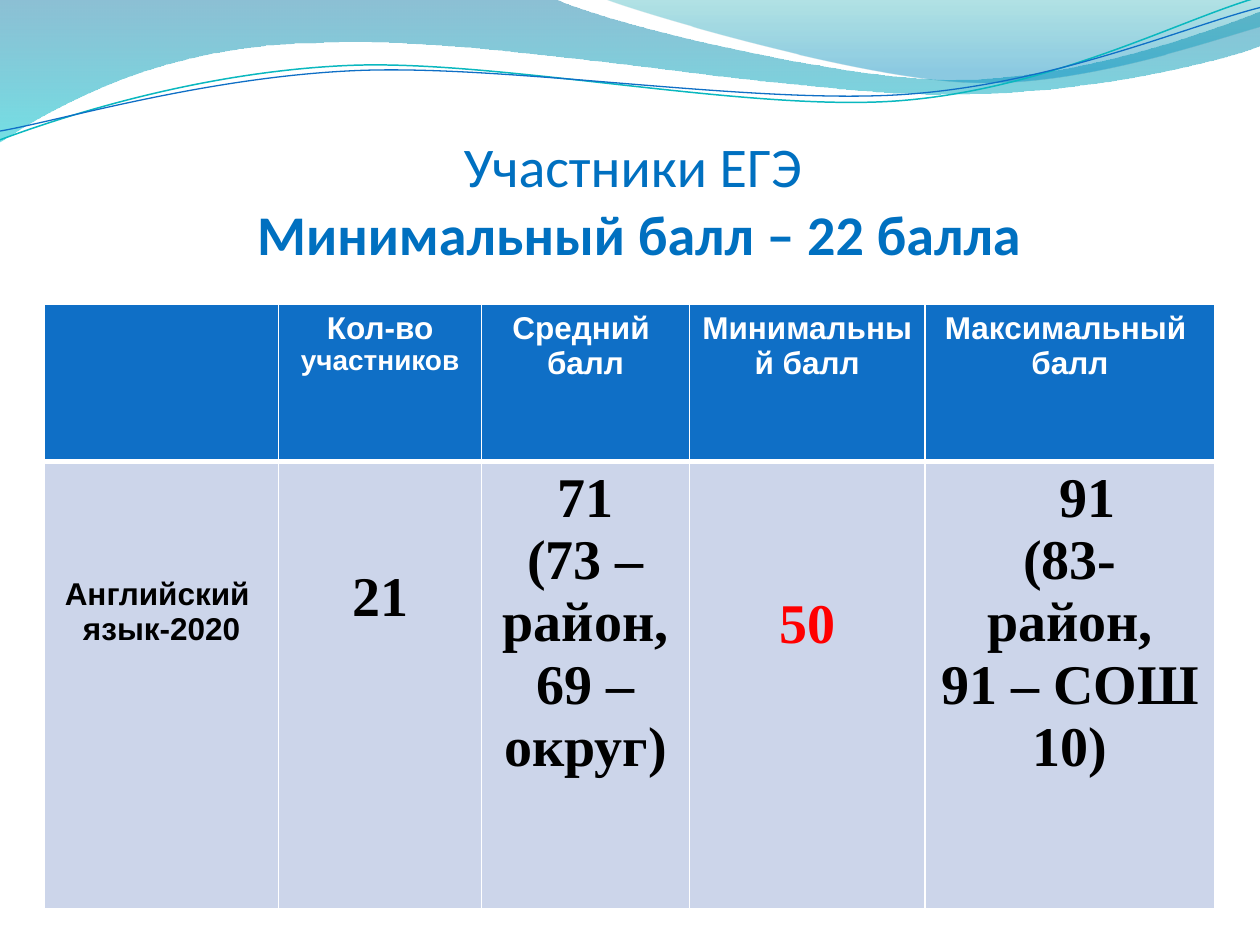
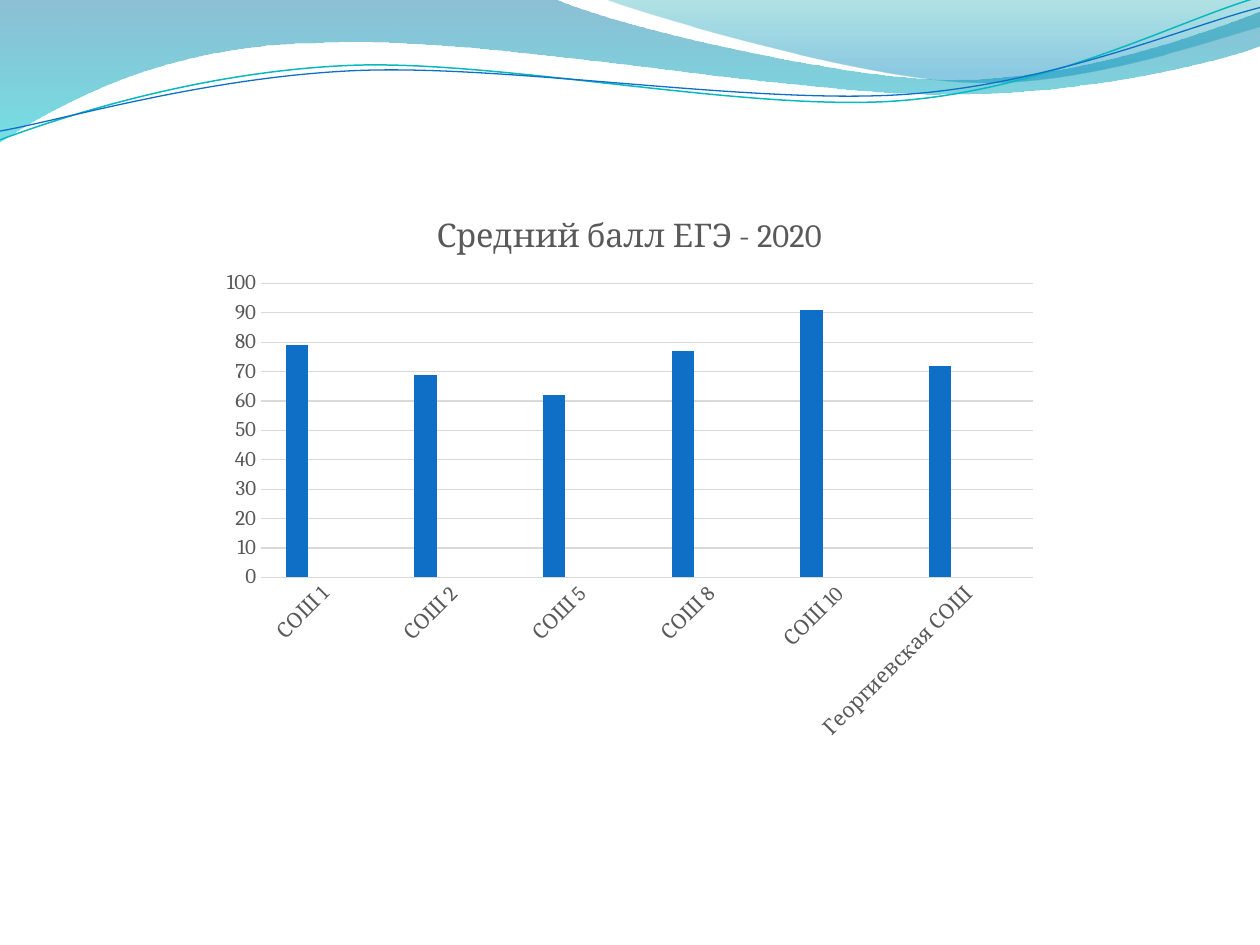
import math

from lxml import etree
from pptx import Presentation
from pptx.chart.data import CategoryChartData
from pptx.dml.color import RGBColor
from pptx.enum import chart as ch, text as tx
from pptx.oxml.ns import qn
from pptx.util import Pt

BLUE = RGBColor(0x0F, 0x6F, 0xC6)
SKY = RGBColor(0x00, 0x9D, 0xD9)
AQUA = RGBColor(0x0B, 0xD0, 0xD9)
TEAL = RGBColor(0x0A, 0xB8, 0xBF)
HEAD = RGBColor(0x00, 0x70, 0xC0)
PALE = RGBColor(0xCC, 0xD5, 0xEA)
WHITE = RGBColor(0xFF, 0xFF, 0xFF)
BLACK = RGBColor(0, 0, 0)
RED = RGBColor(0xFF, 0, 0)
GREY = RGBColor(0x59, 0x59, 0x59)
GRID = RGBColor(0xD9, 0xD9, 0xD9)

# Each wave starts at a point; one more point makes a line, three a curve.
# Gradient stops are position, colour and opacity in percent.
BANDS = [
    ([[(0, -0.7)], [(316.8, -0.7)],
      [(342.7, 12.2), (478.1, 45.4), (545.8, 45.4)],
      [(614.2, 45.4), (689.8, 18.7), (720, 6.5)], [(720.7, 25.9)],
      [(707.8, 31.7), (626.4, 54.7), (537.1, 54)],
      [(447.8, 54), (275, 20.2), (185, 24.5)],
      [(92.9, 25.2), (33.1, 59.8), (-0.7, 81.4)]],
     [(0, RGBColor(0x00, 0x74, 0xA1), 45),
      (1, RGBColor(0x00, 0xC6, 0xCF), 55)]),
    ([[(344.9, -0.7)],
      [(366.5, 7.9), (491, 44.6), (553.7, 46.8)],
      [(616.3, 49.7), (691.9, 23), (720, 15.1)], [(720, 0)]],
     [(0, RGBColor(0x00, 0xA1, 0xA9), 30),
      (0.8, RGBColor(0x00, 0x8B, 0xBF), 45)]),
]
CURVES = [
    ([[(0, 79.9)],
      [(34.6, 67), (113.8, 41), (199.4, 37.4)],
      [(284.4, 33.8), (427, 64.1), (513.4, 57.6)],
      [(599.8, 51.1), (675.4, 10.8), (718.6, -1.4)]], TEAL, 0.85),
    ([[(0, 74.9)],
      [(33.8, 69.1), (118.1, 43.9), (203.8, 40.3)],
      [(290.2, 36.7), (429.8, 59.8), (516.2, 54)],
      [(601.9, 48.2), (677.5, 15.1), (720, 4.3)]], BLUE, 0.75),
]
TILT = 2.7
HUB = (359.4, 42)

ARIAL = dict(name="Arial", size=Pt(18), bold=True)
TIMES = dict(name="Times New Roman", size=Pt(32), bold=True)
CAMBRIA = dict(name="Cambria", size=Pt(12), bold=False)


def put(obj, vals):
    for key, val in vals.items():
        setattr(obj, key, val)


def ink(font, color, vals):
    put(font, vals)
    font.color.rgb = color


def turn(point, angle):
    """Turn a point clockwise about the hub of the thin curves."""
    x, y = point[0] - HUB[0], point[1] - HUB[1]
    cos, sin = math.cos(math.radians(angle)), math.sin(math.radians(angle))
    return HUB[0] + x * cos - y * sin, HUB[1] + x * sin + y * cos


def outline(slide, parts, close, tilt=0):
    """Build a freeform, then join each three-point part into a curve."""
    pts = [tuple(map(Pt, turn(p, tilt))) for part in parts for p in part]
    pen = slide.shapes.build_freeform(*pts[0])
    pen.add_line_segments(pts[1:], close=close)
    shape = pen.convert_to_shape()
    shape.shadow.inherit = False
    shape.rotation = -tilt
    legs = iter(list(shape._element.iter(qn("a:lnTo"))))
    for part in parts[1:]:
        first, *rest = [next(legs) for _ in part]
        if rest:
            bend = etree.Element(qn("a:cubicBezTo"))
            first.addprevious(bend)
            for leg in (first, *rest):
                bend.append(leg[0])
                leg.getparent().remove(leg)
    return shape


def waves(slide, master):
    """Draw the waves and move them behind everything on the master."""
    made = []
    for parts, stops in BANDS:
        band = outline(slide, parts, True)
        band.fill.gradient()
        band.fill.gradient_angle = 270
        for stop, (pos, color, _) in zip(band.fill.gradient_stops, stops):
            stop.position = pos
            stop.color.rgb = color
        tones = list(band._element.spPr.iter(qn("a:srgbClr")))
        for tone, (_, _, alpha) in zip(tones, stops):
            etree.SubElement(tone, qn("a:alpha"), val=str(alpha * 1000))
        band.line.fill.background()
        made.append(band)
    for parts, color, width in CURVES:
        curve = outline(slide, parts, False, TILT)
        curve.fill.background()
        curve.line.color.rgb = color
        curve.line.width = Pt(width)
        made.append(curve)
    for i, shape in enumerate(made):
        node = shape._element
        node.nvSpPr.cNvPr.set("id", str(100 + i))
        master.shapes._spTree.insert(2 + i, node)


def heading(slide, box):
    title = slide.shapes.title
    put(title, dict(zip(("left", "top", "width", "height"), map(Pt, box))))
    frame = title.text_frame
    put(frame, dict(auto_size=tx.MSO_AUTO_SIZE.NONE, word_wrap=True,
                    vertical_anchor=tx.MSO_ANCHOR.BOTTOM,
                    margin_left=0, margin_right=0,
                    margin_top=Pt(3.6), margin_bottom=Pt(38.6)))
    para = frame.paragraphs[0]
    para.alignment = tx.PP_ALIGN.CENTER
    for i, words in enumerate(("Участники ЕГЭ ",
                               "Минимальный балл – 22 балла")):
        if i:
            para.add_line_break()
        run = para.add_run()
        run.text = words
        ink(run.font, HEAD, dict(name="Calibri", size=Pt(32), bold=i == 1))


def border(cell, widths):
    for side, width in zip("LRTB", widths):
        edge = etree.SubElement(cell._tc.get_or_add_tcPr(),
                                qn("a:ln" + side), w=str(Pt(width)))
        fill = etree.SubElement(edge, qn("a:solidFill"))
        etree.SubElement(fill, qn("a:srgbClr"), val=str(WHITE))


def write(cell, lines, color, font, top=3.6):
    cell.margin_top = Pt(top)
    frame = cell.text_frame
    for i, words in enumerate(lines):
        para = frame.add_paragraph() if i else frame.paragraphs[0]
        para.alignment = tx.PP_ALIGN.CENTER
        run = para.add_run()
        run.text = words
        ink(run.font, color, font)


def scores(slide, left, top):
    cols = (133.9, 115.9, 118.8, 134.6, 165.7)
    rows = (89.8, 256)
    grid = slide.shapes.add_table(2, 5, Pt(left), Pt(top),
                                  Pt(sum(cols)), Pt(sum(rows))).table
    for col, width in zip(grid.columns, cols):
        col.width = Pt(width)
    for row, height in zip(grid.rows, rows):
        row.height = Pt(height)
    for r, (fill, foot) in enumerate(((BLUE, 3), (PALE, 1))):
        for cell in grid.rows[r].cells:
            border(cell, (1, 1, 3 if r else 1, foot))
            cell.fill.solid()
            cell.fill.fore_color.rgb = fill
    heads = (["Кол-во "], ["Средний ", "балл"], ["Минимальный балл"],
             ["Максимальный ", "балл"])
    for c, lines in enumerate(heads, 1):
        write(grid.cell(0, c), lines, WHITE, ARIAL)
    run = grid.cell(0, 1).text_frame.paragraphs[0].add_run()
    run.text = "участников"
    ink(run.font, WHITE, {**ARIAL, "size": Pt(16)})
    body = ((["Английский ", "язык-2020"], BLACK, ARIAL, 66),
            (["21"], BLACK, TIMES, 60),
            (["71", "(73 – район, 69 – округ)"], BLACK, TIMES),
            (["50"], RED, TIMES, 75.4),
            (["91", "(83- район,", "91 – СОШ 10)"], BLACK, TIMES))
    for c, args in enumerate(body):
        write(grid.cell(1, c), *args)
    best = grid.cell(1, 4).text_frame.paragraphs[0]
    best._p.get_or_add_pPr().set("marL", str(Pt(20)))


def layout(node, index, inner=False, **spots):
    """Fix the place of a chart part as shares of the chart."""
    for old in node.findall(qn("c:layout")):
        node.remove(old)
    outer = etree.Element(qn("c:layout"))
    node.insert(index, outer)
    hand = etree.SubElement(outer, qn("c:manualLayout"))
    if inner:
        etree.SubElement(hand, qn("c:layoutTarget"), val="inner")
    for key in ("x", "y"):
        etree.SubElement(hand, qn(f"c:{key}Mode"), val="edge")
    for key, val in spots.items():
        etree.SubElement(hand, qn("c:" + key), val=str(val))


def averages(slide, box):
    data = CategoryChartData()
    data.categories = ["СОШ 1", "СОШ 2", "СОШ 5", "СОШ 8", "СОШ 10",
                       "Георгиевская СОШ"]
    data.add_series("Series 1", (79, 69, 62, 77, 91, 72))
    for name in ("Series 2", "Series 3"):
        data.add_series(name, (None,) * 6)
    chart = slide.shapes.add_chart(ch.XL_CHART_TYPE.COLUMN_CLUSTERED,
                                   *map(Pt, box), data).chart
    chart.has_legend = False
    ink(chart.font, BLACK, {**CAMBRIA, "size": Pt(10)})
    frame = chart.chart_title.text_frame
    frame.text = "Средний балл ЕГЭ - 2020"
    ink(frame.paragraphs[0].runs[0].font, GREY, {**CAMBRIA, "size": Pt(18.6)})
    wide, high = box[2:]
    layout(chart.chart_title._element, 1, x=126.2 / wide, y=8.6 / high)
    layout(chart._chartSpace.chart.plotArea, 0, True,
           x=29.2 / wide, y=52 / high, w=441.2 / wide, h=168 / high)

    plot = chart.plots[0]
    put(plot, dict(gap_width=219, overlap=-27, vary_by_categories=False))
    for ser, color in zip(plot.series, (BLUE, SKY, AQUA)):
        ser.format.fill.solid()
        ser.format.fill.fore_color.rgb = color

    cat, val = chart.category_axis, chart.value_axis
    for axis in (cat, val):
        put(axis, dict(major_tick_mark=ch.XL_TICK_MARK.NONE,
                       minor_tick_mark=ch.XL_TICK_MARK.NONE))
        ink(axis.tick_labels.font, GREY, CAMBRIA)
    put(val, dict(minimum_scale=0, maximum_scale=100, major_unit=10,
                  has_major_gridlines=True))
    val.format.line.fill.background()
    for line in (cat.format.line, val.major_gridlines.format.line):
        line.color.rgb = GRID
        line.width = Pt(0.75)
    slant = cat._element.find(qn("c:txPr")).find(qn("a:bodyPr"))
    slant.set("rot", str(-45 * 60000))


def main():
    deck = Presentation()
    put(deck, dict(slide_width=Pt(720), slide_height=Pt(540)))
    first = deck.slides.add_slide(deck.slide_layouts[5])
    waves(first, deck.slide_master)
    heading(first, (36.7, 49, 657.4, 141.8))
    scores(first, 25.4, 173.8)
    second = deck.slides.add_slide(deck.slide_layouts[6])
    averages(second, (120, 110, 480, 320))
    deck.save("out.pptx")


if __name__ == "__main__":
    main()
